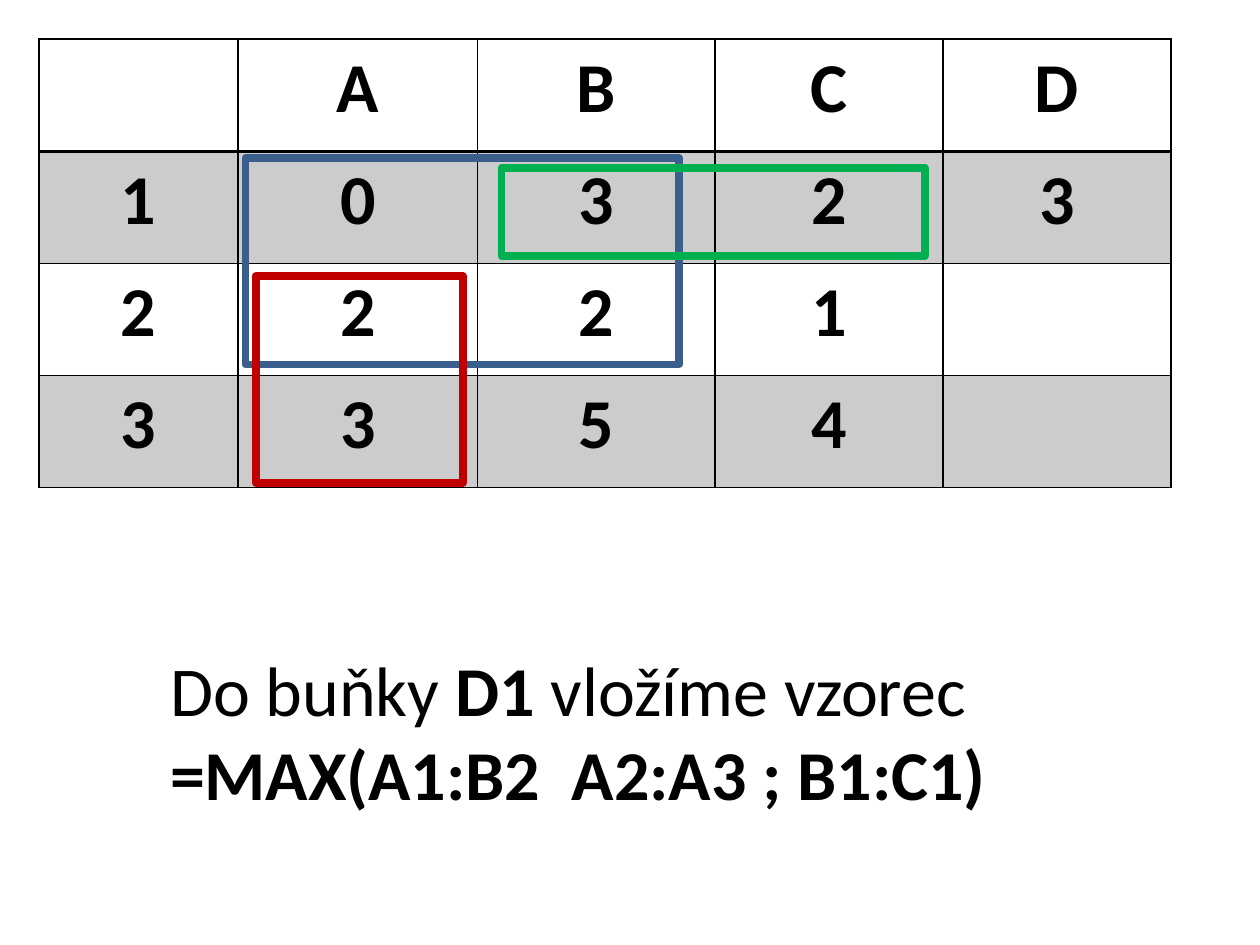
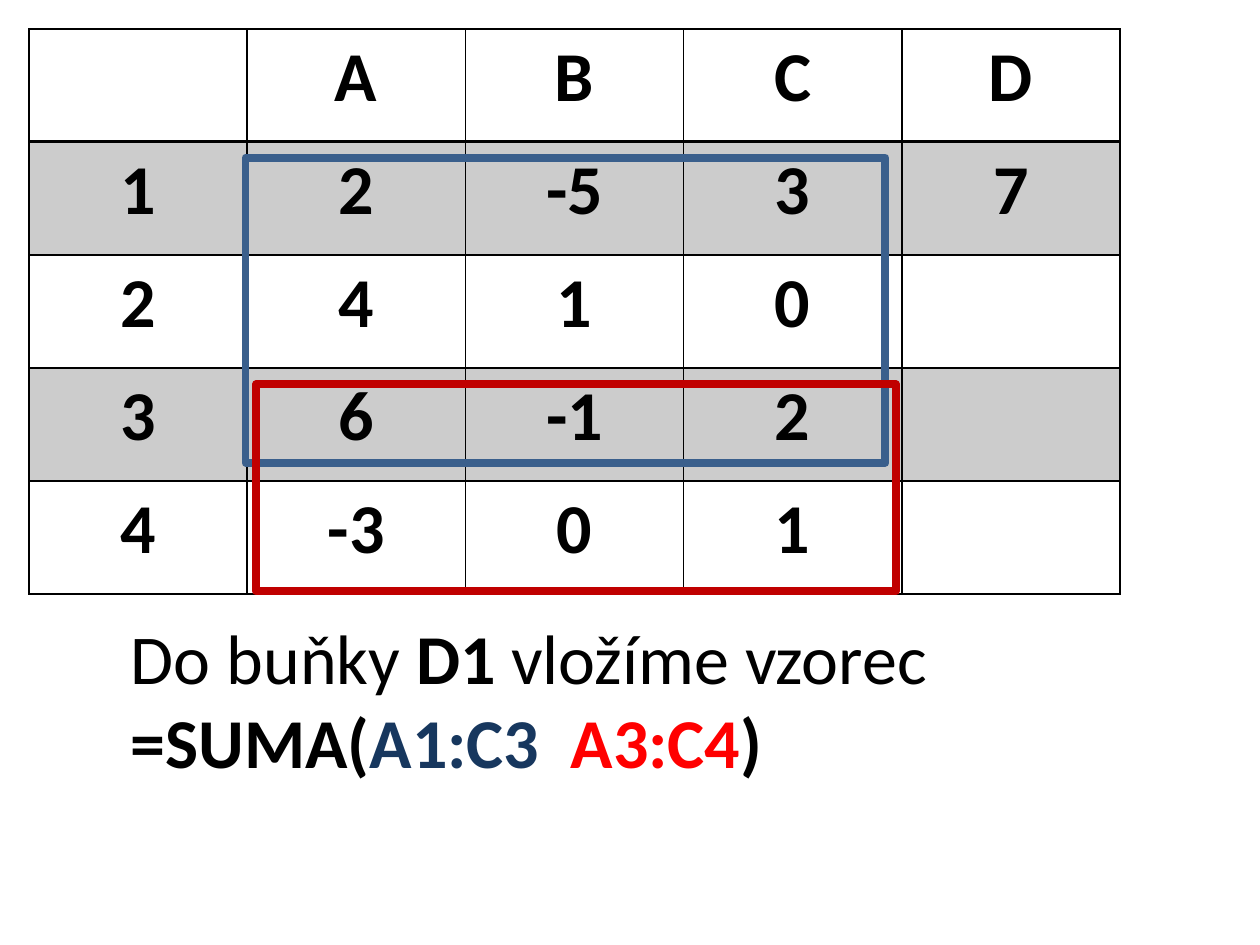
from lxml.etree import SubElement
from pptx import Presentation
from pptx.dml.color import RGBColor
from pptx.enum.shapes import MSO_SHAPE
from pptx.enum.text import MSO_AUTO_SIZE, PP_ALIGN
from pptx.oxml import parse_xml
from pptx.oxml.ns import nsdecls, qn
from pptx.util import Cm, Pt

BLACK = RGBColor(0x00, 0x00, 0x00)
BLUE = RGBColor(0x3A, 0x5F, 0x8C)
RED = RGBColor(0xC0, 0x00, 0x00)
GREEN = RGBColor(0x00, 0xB0, 0x50)
NAVY = RGBColor(0x17, 0x37, 0x5E)
BRIGHT_RED = RGBColor(0xFF, 0x00, 0x00)
FONT = "Calibri"
TEXT_SIZE = Pt(40)
BAND_ALPHA = 20000  # 20 %, in thousandths of a percent
GRID_LINE, HEADER_LINE, FRAME_LINE = Pt(1), Pt(2), Pt(4.5)

# Lengths in cm; boxes are left, top, width, height; runs are text, bold, colour
SLIDES = [
    {
        "origin": (0.79, 0.79),
        "columns": [4.01, 4.83, 4.78, 4.6, 4.6],
        "row_height": 2.26,
        "cells": [
            ["", "A", "B", "C", "D"],
            ["1", "0", "3", "2", "3"],
            ["2", "2", "2", "1", ""],
            ["3", "3", "5", "4", ""],
        ],
        "formula_box": (3.18, 12.9, 20.04, 3.68),
        "formula": [
            [("Do buňky ", False, BLACK), ("D1 ", True, BLACK),
             ("vložíme vzorec ", False, BLACK),
             ("=MAX(A1:B2  A2:A3 ; B1:C1)", True, BLACK)],
        ],
        "frames": [
            (BLUE, (4.95, 3.18, 8.74, 4.17)),
            (RED, (5.16, 5.56, 4.17, 4.17)),
            (GREEN, (10.11, 3.38, 8.53, 1.78)),
        ],
    },
    {
        "origin": (0.58, 0.58),
        "columns": [4.4] * 5,
        "row_height": 2.28,
        "cells": [
            ["", "A", "B", "C", "D"],
            ["1", "2", "-5", "3", "7"],
            ["2", "4", "1", "0", ""],
            ["3", "6", "-1", "2", ""],
            ["4", "-3", "0", "1", ""],
        ],
        "formula_box": (2.39, 12.27, 20.83, 3.68),
        "formula": [
            [("Do buňky ", False, BLACK), ("D1", True, BLACK),
             (" vložíme vzorec", False, BLACK)],
            [("=SUMA(", True, BLACK), ("A1:C3  ", True, NAVY),
             ("A3:C4", True, BRIGHT_RED), (")", True, BLACK)],
        ],
        "frames": [
            (BLUE, (4.95, 3.18, 12.9, 6.15)),
            (RED, (5.16, 7.75, 12.9, 4.17)),
        ],
    },
]


def add_run(paragraph, text, bold, color):
    run = paragraph.add_run()
    run.text = text
    run.font.name = FONT
    run.font.size = TEXT_SIZE
    run.font.bold = bold
    run.font.color.rgb = color


def set_borders(cell, top, bottom):
    """Borders come before the fill in the cell properties."""
    properties = cell._tc.get_or_add_tcPr()
    widths = {"lnL": GRID_LINE, "lnR": GRID_LINE, "lnT": top, "lnB": bottom}
    for position, (tag, width) in enumerate(widths.items()):
        properties.insert(position, parse_xml(
            f'<a:{tag} {nsdecls("a")} w="{width}"><a:solidFill>'
            f'<a:srgbClr val="{BLACK}"/></a:solidFill></a:{tag}>'))


def fill_band(cell):
    cell.fill.solid()
    cell.fill.fore_color.rgb = BLACK
    color = cell._tc.tcPr.find(qn("a:solidFill")).find(qn("a:srgbClr"))
    SubElement(color, qn("a:alpha"), val=str(BAND_ALPHA))


def add_sheet(slide, origin, columns, row_height, cells):
    left, top = origin
    table = slide.shapes.add_table(
        len(cells), len(columns), Cm(left), Cm(top),
        Cm(sum(columns)), Cm(row_height * len(cells))).table
    table.first_row = table.horz_banding = False
    for column, width in zip(table.columns, columns):
        column.width = Cm(width)
    for row_index, texts in enumerate(cells):
        table.rows[row_index].height = Cm(row_height)
        for column_index, text in enumerate(texts):
            cell = table.cell(row_index, column_index)
            if row_index % 2:
                fill_band(cell)
            else:
                cell.fill.background()
            set_borders(cell,
                        HEADER_LINE if row_index == 1 else GRID_LINE,
                        HEADER_LINE if row_index == 0 else GRID_LINE)
            if text:
                paragraph = cell.text_frame.paragraphs[0]
                paragraph.alignment = PP_ALIGN.CENTER
                add_run(paragraph, text, True, BLACK)


def add_formula(slide, box, paragraphs):
    frame = slide.shapes.add_textbox(*map(Cm, box)).text_frame
    frame.word_wrap = True
    frame.auto_size = MSO_AUTO_SIZE.SHAPE_TO_FIT_TEXT
    for index, runs in enumerate(paragraphs):
        paragraph = frame.add_paragraph() if index else frame.paragraphs[0]
        for run in runs:
            add_run(paragraph, *run)


def add_range_frame(slide, color, box):
    shape = slide.shapes.add_shape(MSO_SHAPE.RECTANGLE, *map(Cm, box))
    shape.shadow.inherit = False
    shape.fill.background()
    shape.line.color.rgb = color
    shape.line.width = FRAME_LINE
    SubElement(shape.line._get_or_add_ln(), qn("a:round"))


def main():
    presentation = Presentation()
    presentation.slide_width, presentation.slide_height = Cm(25.4), Cm(19.05)
    for content in SLIDES:
        slide = presentation.slides.add_slide(presentation.slide_layouts[6])
        # Sheet, then formula, then the frames around the cell ranges
        add_sheet(slide, content["origin"], content["columns"],
                  content["row_height"], content["cells"])
        add_formula(slide, content["formula_box"], content["formula"])
        for color, box in content["frames"]:
            add_range_frame(slide, color, box)
    presentation.save("out.pptx")


if __name__ == "__main__":
    main()
